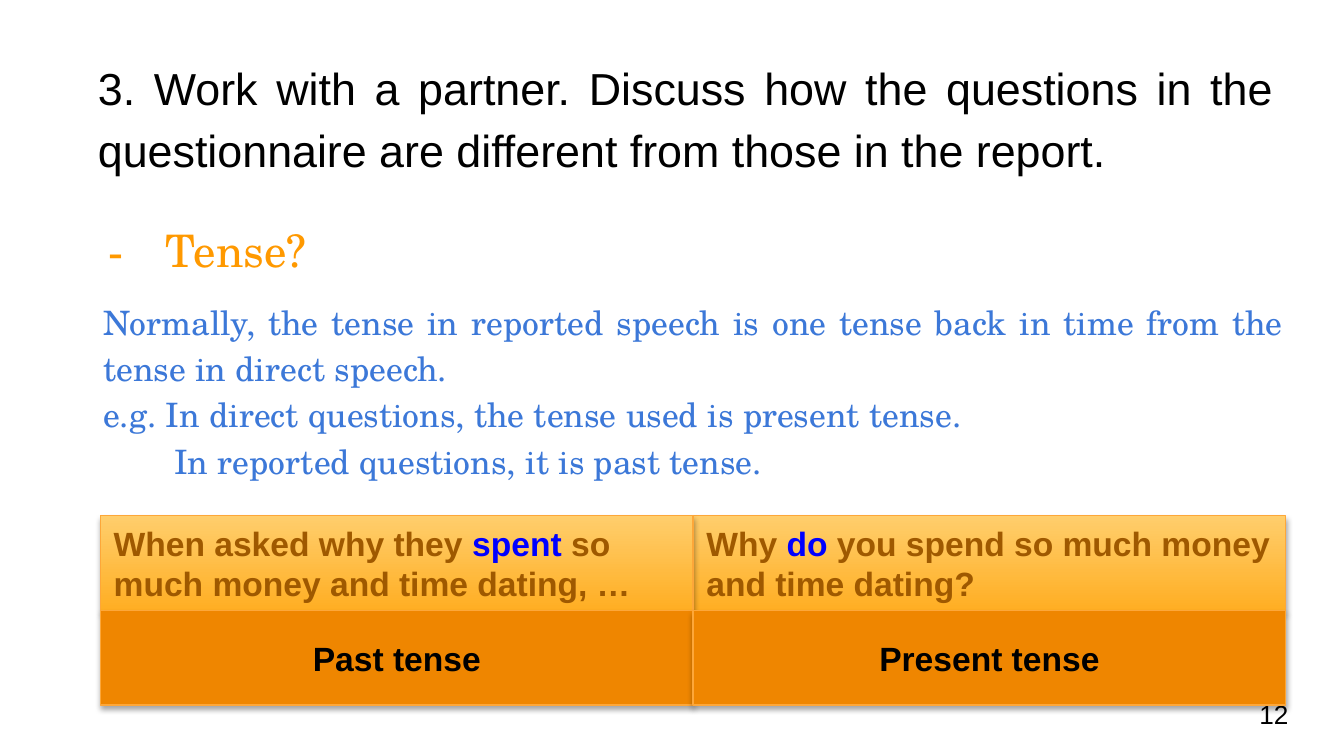
from lxml.etree import SubElement
from pptx import Presentation
from pptx.dml.color import RGBColor
from pptx.enum.shapes import MSO_SHAPE
from pptx.enum.text import MSO_ANCHOR, PP_ALIGN
from pptx.oxml.ns import qn
from pptx.util import Cm, Pt

BLACK = RGBColor(0x00, 0x00, 0x00)
ORANGE = RGBColor(0xFF, 0x99, 0x00)
BLUE = RGBColor(0x3C, 0x78, 0xD8)
VERB = RGBColor(0x00, 0x00, 0xFF)
BROWN = RGBColor(0x9F, 0x59, 0x00)
AMBER = RGBColor(0xFF, 0xAE, 0x23)
LIGHT = RGBColor(0xFF, 0xCE, 0x6C)
DEEP = RGBColor(0xEF, 0x86, 0x00)
EDGE = RGBColor(0xFD, 0xA7, 0x39)

SANS = "Arial"
SERIF = "TeX Gyre Schola"


def set_frame(shape, anchor=MSO_ANCHOR.MIDDLE, pad=Cm(0.25)):
    frame = shape.text_frame
    frame.word_wrap = True
    frame.vertical_anchor = anchor
    frame.margin_left = frame.margin_right = Cm(0.25)
    frame.margin_top = frame.margin_bottom = pad
    return frame


def add_run(para, text, size, font, color, bold=False):
    run = para.add_run()
    run.text = text
    run.font.size = Pt(size)
    run.font.name = font
    run.font.color.rgb = color
    run.font.bold = bold


def set_para(para, align, space=1.15):
    para.alignment = align
    para.line_spacing = space


def add_box(slide, left, top, width, height):
    box = slide.shapes.add_textbox(Cm(left), Cm(top), Cm(width), Cm(height))
    return set_frame(box)


def add_dash(para, color):
    """Hang a dash bullet in front of the paragraph."""
    props = para._p.get_or_add_pPr()
    props.set("marL", str(Cm(1.27)))
    props.set("indent", str(-Cm(1.07)))
    tint = SubElement(props, qn("a:buClr"))
    SubElement(tint, qn("a:srgbClr"), val=str(color))
    SubElement(props, qn("a:buFont"), typeface=SERIF)
    SubElement(props, qn("a:buChar"), char="-")


def add_shadow(shape):
    shape.shadow.inherit = False
    effects = shape._element.spPr.find(qn("a:effectLst"))
    outer = SubElement(effects, qn("a:outerShdw"), blurRad=str(Pt(3.1)),
                       dist=str(Pt(1.8)), dir="5400000", rotWithShape="0")
    shade = SubElement(outer, qn("a:srgbClr"), val=str(BLACK))
    SubElement(shade, qn("a:alpha"), val="35000")


def add_card(slide, col, row, align, parts):
    """Add one card; the top row has a gradient, the bottom row is plain."""
    wide, high = 11.2, 1.79
    card = slide.shapes.add_shape(
        MSO_SHAPE.RECTANGLE, Cm(1.9 + col * wide), Cm(9.75 + row * high),
        Cm(wide), Cm(high))
    if row == 0:
        card.fill.gradient()
        card.fill.gradient_angle = 90
        for stop, color in zip(card.fill.gradient_stops, (AMBER, LIGHT)):
            stop.color.rgb = color
    else:
        card.fill.solid()
        card.fill.fore_color.rgb = DEEP
    card.line.color.rgb = EDGE
    card.line.width = Pt(0.75)
    add_shadow(card)
    para = set_frame(card, pad=Cm(0.13)).paragraphs[0]
    para.alignment = align
    for text, color in parts:
        add_run(para, text, 18, SANS, color, bold=True)


def add_title(slide, text):
    title = slide.shapes.title
    title.left, title.top = Cm(1.6), Cm(0.74)
    title.width, title.height = Cm(22.71), Cm(2.79)
    para = set_frame(title, MSO_ANCHOR.TOP).paragraphs[0]
    set_para(para, PP_ALIGN.JUSTIFY)
    add_run(para, text, 24, SANS, BLACK)


def add_notes(slide):
    lines = (
        ("Normally, the tense in reported speech is one tense back in time "
         "from the tense in direct speech.", PP_ALIGN.JUSTIFY, 0),
        ("e.g. In direct questions, the tense used is present tense.",
         PP_ALIGN.LEFT, 0),
        ("In reported questions, it is past tense.", PP_ALIGN.LEFT, 1.34),
    )
    frame = add_box(slide, 1.7, 5.74, 22.81, 3.2)
    for i, (text, align, indent) in enumerate(lines):
        para = frame.add_paragraph() if i else frame.paragraphs[0]
        set_para(para, align)
        para._p.get_or_add_pPr().set("indent", str(Cm(indent)))
        add_run(para, text, 18, SERIF, BLUE)


def main():
    deck = Presentation()
    deck.slide_width, deck.slide_height = Cm(25.4), Cm(14.29)
    slide = deck.slides.add_slide(deck.slide_layouts[5])

    # Task
    add_title(slide, "3. Work with a partner. Discuss how the questions in "
              "the questionnaire are different from those in the report.")

    # Topic
    para = add_box(slide, 1.6, 3.99, 22.99, 1.32).paragraphs[0]
    set_para(para, PP_ALIGN.JUSTIFY)
    add_dash(para, ORANGE)
    add_run(para, "Tense?", 24, SERIF, ORANGE)

    # Rule and example
    add_notes(slide)

    # Page number
    para = add_box(slide, 23.55, 12.95, 1.52, 1.09).paragraphs[0]
    add_run(para, "12", 14, SANS, BLACK)

    # Cards: sentence above, tense below
    pairs = (
        ((("When asked why they ", BROWN), ("spent ", VERB),
          ("so much money and time dating, …", BROWN)), "Past tense"),
        ((("Why ", BROWN), ("do ", VERB),
          ("you spend so much money and time dating?", BROWN)),
         "Present tense"),
    )
    for col, (parts, tense) in reversed(list(enumerate(pairs))):
        add_card(slide, col, 0, PP_ALIGN.LEFT, parts)
    for col, (parts, tense) in enumerate(pairs):
        add_card(slide, col, 1, PP_ALIGN.CENTER, ((tense, BLACK),))

    deck.save("out.pptx")


if __name__ == "__main__":
    main()
